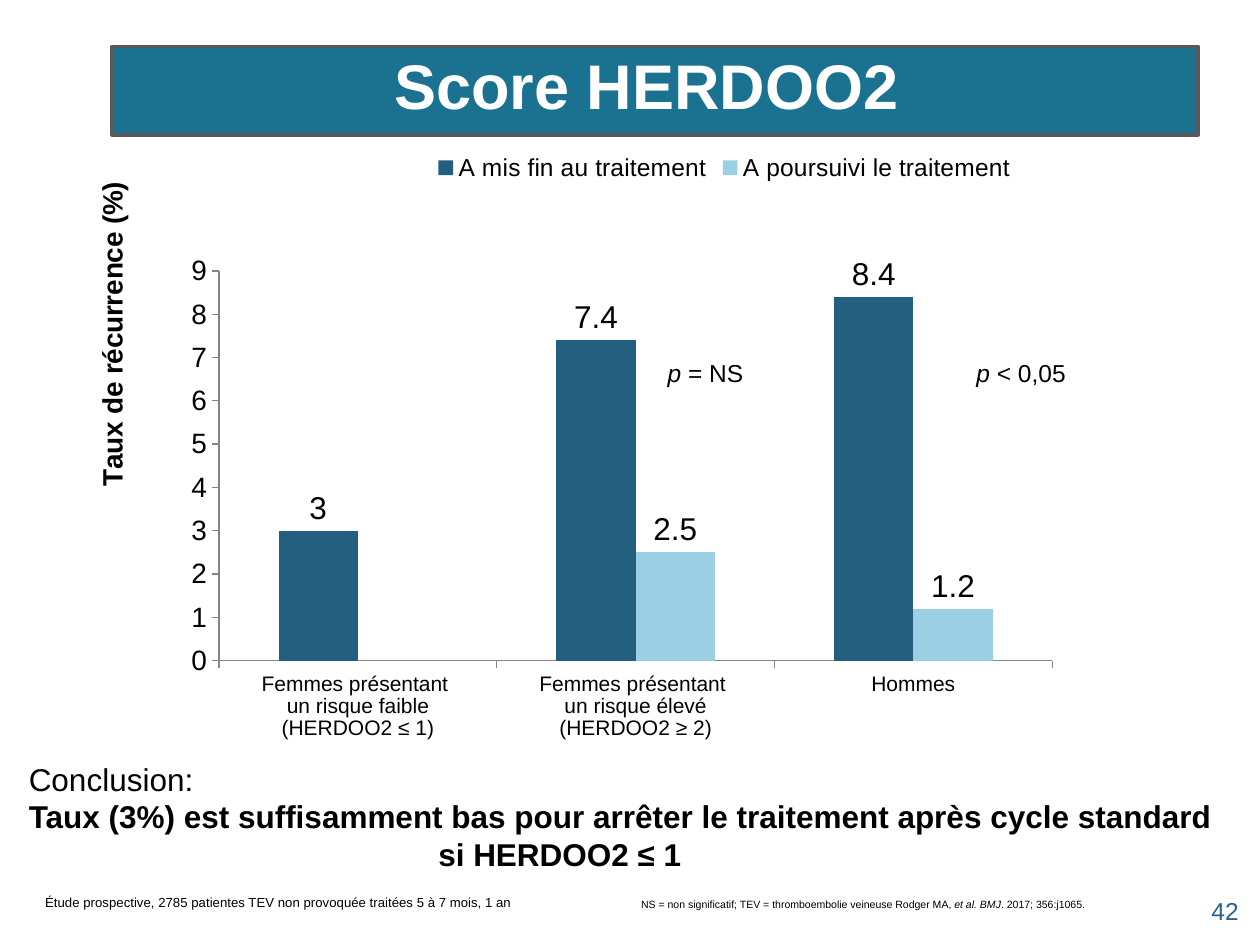
from dataclasses import dataclass

from lxml import etree
from pptx import Presentation
from pptx import util as u
from pptx.chart import data as cd
from pptx.dml.color import RGBColor
from pptx.enum import chart as ch
from pptx.enum import text as tx
from pptx.oxml.ns import qn

FONT = "Arial"
BLACK = RGBColor(0x00, 0x00, 0x00)
WHITE = RGBColor(0xFF, 0xFF, 0xFF)
TEAL = RGBColor(0x1B, 0x71, 0x90)
EDGE = RGBColor(0x59, 0x59, 0x59)
NAVY = RGBColor(0x25, 0x5F, 0x7F)
SKY = RGBColor(0x9B, 0xCF, 0xE4)
BLUE = RGBColor(0x28, 0x5E, 0x90)
GREY = RGBColor(0x86, 0x86, 0x86)


@dataclass
class Run:
    text: str
    bold: bool = False
    italic: bool = False


@dataclass
class Note:
    box: tuple[float, float, float, float]
    lines: list[list[Run]]
    size: float
    color: RGBColor = BLACK
    align: tx.PP_ALIGN = tx.PP_ALIGN.LEFT
    anchor: tx.MSO_ANCHOR = tx.MSO_ANCHOR.TOP
    wrap: bool = True
    space: float = 1.0


def style(font, *, size: float, color: RGBColor = BLACK,
          bold: bool = False, italic: bool = False) -> None:
    font.name, font.size = FONT, u.Pt(size)
    font.bold, font.italic = bold, italic
    font.color.rgb = color


def write(par, runs: list[Run], *, size: float, color: RGBColor = BLACK,
          align=tx.PP_ALIGN.LEFT, space: float = 1.0) -> None:
    par.alignment, par.line_spacing = align, space
    for part in runs:
        run = par.add_run()
        run.text = part.text
        style(run.font, size=size, color=color, bold=part.bold, italic=part.italic)


def draw_note(slide, note: Note):
    frame = slide.shapes.add_textbox(*map(u.Inches, note.box)).text_frame
    frame.word_wrap = note.wrap
    frame.vertical_anchor = note.anchor
    for i, runs in enumerate(note.lines):
        par = frame.add_paragraph() if i else frame.paragraphs[0]
        write(par, runs, size=note.size, color=note.color,
              align=note.align, space=note.space)
    return frame


def place(node, index: int, **values) -> None:
    """Give a chart part a manual layout."""
    for old in node.findall(qn("c:layout")):
        node.remove(old)
    layout = etree.Element(qn("c:layout"))
    manual = etree.SubElement(layout, qn("c:manualLayout"))
    for key, value in values.items():
        etree.SubElement(manual, qn(f"c:{key}")).set("val", str(value))
    node.insert(index, layout)


def draw_title(slide) -> None:
    title = slide.shapes.title
    title.left, title.top, title.width, title.height = map(
        u.Inches, (0.89, 0.37, 8.62, 0.7))
    title.fill.solid()
    title.fill.fore_color.rgb = TEAL
    title.line.color.rgb = EDGE
    title.line.width = u.Pt(2)
    frame = title.text_frame
    frame.vertical_anchor = tx.MSO_ANCHOR.MIDDLE
    frame.margin_left = frame.margin_right = u.Inches(0.07)
    frame.margin_top = frame.margin_bottom = u.Inches(0.04)
    write(frame.paragraphs[0], [Run("Score HERDOO2 ", bold=True)], size=36,
          color=WHITE, align=tx.PP_ALIGN.CENTER, space=0.85)


def draw_chart(slide) -> None:
    data = cd.CategoryChartData()
    data.categories = [
        "Femmes présentant \nun risque faible\n(HERDOO2 ≤ 1)",
        "Femmes présentant \nun risque élevé\n(HERDOO2 ≥ 2)",
        "Hommes",
    ]
    data.add_series("A mis fin au traitement", (3, 7.4, 8.4))
    data.add_series("A poursuivi le traitement", (None, 2.5, 1.2))
    box = map(u.Inches, (0.02, 1.11, 11.46, 5.88))
    chart = slide.shapes.add_chart(
        ch.XL_CHART_TYPE.COLUMN_CLUSTERED, *box, data).chart
    style(chart.font, size=18)
    chart.has_title = False

    # Legend
    chart.has_legend = True
    chart.legend.position = ch.XL_LEGEND_POSITION.TOP
    chart.legend.include_in_layout = False
    style(chart.legend.font, size=14)

    # Bars
    plot = chart.plots[0]
    plot.gap_width, plot.overlap, plot.vary_by_categories = 150, 0, False
    for series, color in zip(plot.series, (NAVY, SKY)):
        series.format.fill.solid()
        series.format.fill.fore_color.rgb = color
        labels = series.data_labels
        labels.show_value = True
        labels.position = ch.XL_LABEL_POSITION.OUTSIDE_END
        style(labels.font, size=18)
    place(plot._element.getparent(), 0, layoutTarget="inner", xMode="edge",
          yMode="edge", x=0.15, y=0.177, w=0.577, h=0.526)

    # Axes
    for axis, size in ((chart.category_axis, 12), (chart.value_axis, 16)):
        axis.has_major_gridlines = False
        axis.major_tick_mark = ch.XL_TICK_MARK.OUTSIDE
        axis.format.line.color.rgb = GREY
        style(axis.tick_labels.font, size=size)
    rates = chart.value_axis
    rates.minimum_scale, rates.maximum_scale, rates.major_unit = 0, 9, 1
    frame = rates.axis_title.text_frame
    write(frame.paragraphs[0], [Run("Taux de récurrence (%)", bold=True)], size=16)
    turn = frame._txBody.bodyPr
    turn.set("rot", "-5400000")
    turn.set("vert", "horz")
    place(rates.axis_title._element, 1, xMode="edge", yMode="edge",
          x=0.06, y=0.05)


def main() -> None:
    deck = Presentation()
    deck.slide_width, deck.slide_height = u.Inches(10), u.Inches(7.5)
    slide = deck.slides.add_slide(deck.slide_layouts[5])
    draw_title(slide)
    draw_chart(slide)

    # P values, footnotes and page number
    notes = [
        Note((left, 2.79, width, 0.34), [[Run("p ", italic=True), Run(value)]],
             14, wrap=False)
        for left, width, value in ((5.2, 0.81, "= NS"), (7.65, 0.91, "< 0,05"))
    ] + [
        Note((0.26, 7.05, 9.48, 0.23), [[Run(
            "Étude prospective, 2785 patientes TEV non provoquée "
            "traitées 5 à 7 mois, 1 an")]], 7.5),
        Note((4.99, 7.03, 4.63, 0.25), [[
            Run("NS = non significatif; TEV = thromboembolie veineuse Rodger MA,"),
            Run(" et al. BMJ", italic=True),
            Run(". 2017; 356:j1065.")]],
            6, anchor=tx.MSO_ANCHOR.BOTTOM, space=0.9),
        Note((7.6, 7.06, 2.33, 0.36), [[Run("42")]], 14, BLUE,
             align=tx.PP_ALIGN.RIGHT),
    ]
    for note in notes:
        draw_note(slide, note)

    # Conclusion, with its last line indented
    frame = draw_note(slide, Note((0.13, 5.98, 9.75, 1.01), [
        [Run("Conclusion:")],
        [Run("Taux (3%) est suffisamment bas pour arrêter le traitement "
             "après cycle standard", bold=True)],
        [Run("si HERDOO2 ≤ 1", bold=True)]], 18))
    props = frame.paragraphs[-1]._p.get_or_add_pPr()
    props.set("marL", str(u.Inches(3.25)))

    deck.save("out.pptx")


if __name__ == "__main__":
    main()
